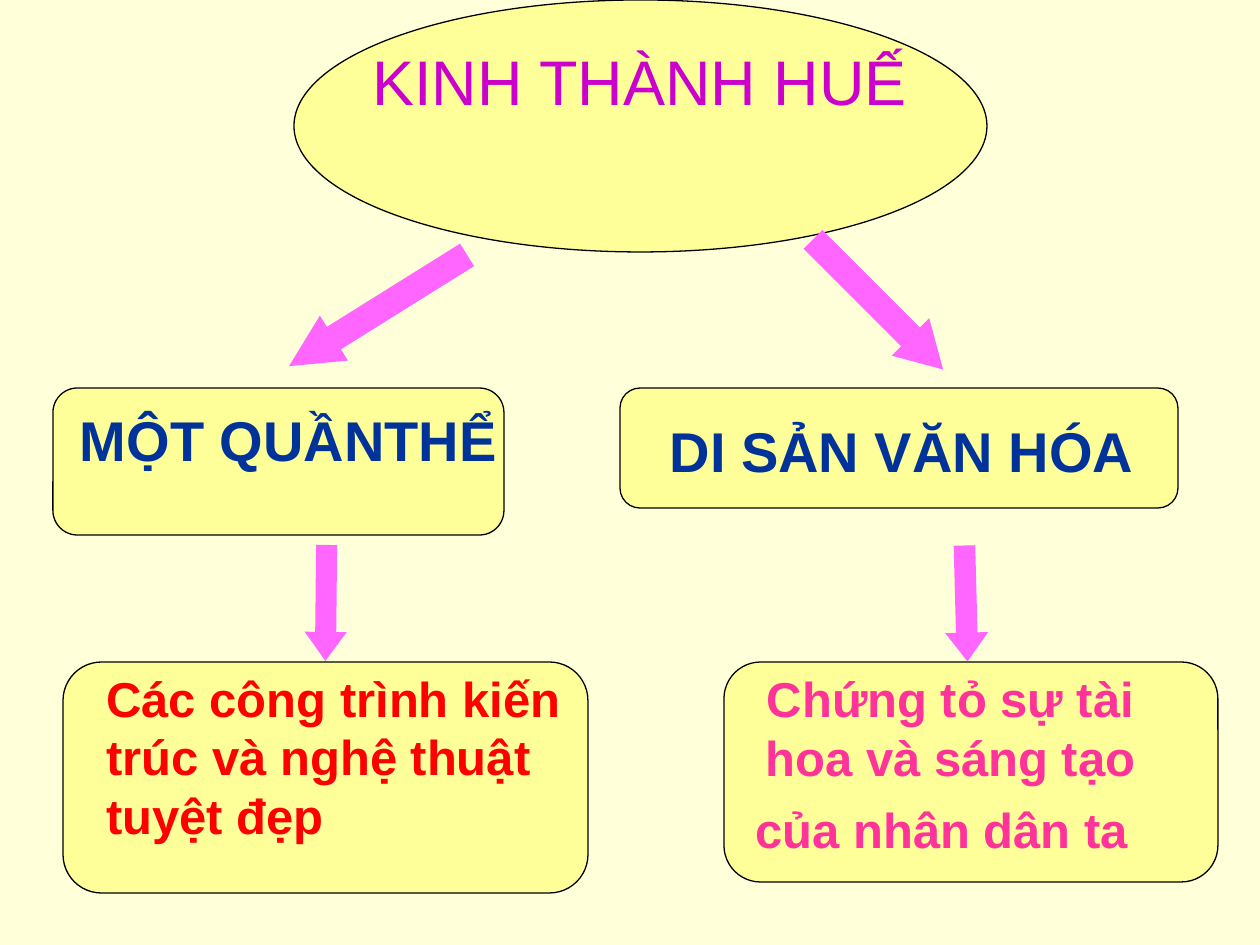
"""Build a concept map slide about the Huế citadel."""
from typing import NamedTuple

from pptx import Presentation
from pptx.dml.color import RGBColor
from pptx.enum.shapes import MSO_SHAPE as Preset
from pptx.enum.text import MSO_ANCHOR as Anchor, MSO_AUTO_SIZE as AutoSize, PP_ALIGN as Align
from pptx.util import Emu, Pt

PX_PER_INCH = 126
PANEL_FILL = "FFFF99"
ARROW_FILL = "FF66FF"
HEADING_BLUE = "003399"


class Box(NamedTuple):
    """A rectangle in px."""
    left: int
    top: int
    width: int
    height: int


class Panel(NamedTuple):
    """An outlined background shape."""
    preset: Preset
    box: Box


class Arrow(NamedTuple):
    """A block arrow turned clockwise from pointing right."""
    box: Box
    angle: float
    head_ratio: float


class Run(NamedTuple):
    """A piece of text with its size in points."""
    text: str
    size: int


class Label(NamedTuple):
    """A text block laid over a panel."""
    box: Box
    runs: list[Run]
    colour: str
    bold: bool = True
    align: Align = Align.CENTER


ROUNDED = Preset.FLOWCHART_ALTERNATE_PROCESS
PANELS = [
    Panel(ROUNDED, Box(724, 662, 494, 220)),
    Panel(ROUNDED, Box(63, 662, 525, 231)),
    Panel(ROUNDED, Box(620, 388, 558, 120)),
    Panel(Preset.OVAL, Box(294, 0, 693, 252)),
    Panel(ROUNDED, Box(53, 388, 451, 147)),
]
TOPIC = Label(Box(324, 29, 651, 97), [Run("KINH THÀNH HUẾ", 36), Run(" ", 40)],
              "CC00CC", bold=False)
LABELS = [
    Label(Box(63, 399, 451, 81), [Run("MỘT QUẦNTHỂ ", 32)], HEADING_BLUE),
    Label(Box(630, 410, 557, 81), [Run("DI SẢN VĂN HÓA ", 32)], HEADING_BLUE),
    Label(Box(735, 662, 431, 208),
          [Run("Chứng tỏ sự tài hoa và sáng tạo của nhân dân ta", 28), Run(" ", 36)],
          "FF3399"),
    Label(Box(94, 662, 494, 190),
          [Run("Các công trình kiến trúc và nghệ thuật tuyệt đẹp", 28)],
          "FF0000", align=Align.LEFT),
]
ARROWS = [
    Arrow(Box(268, 582, 116, 42), 90.6, 0.69),
    Arrow(Box(908, 582, 116, 43), 88.5, 0.67),
    Arrow(Box(273, 284, 210, 53), 148, 1),
    Arrow(Box(786, 278, 184, 53), 45, 0.87),
]


def px(length: int) -> Emu:
    """Turn px into EMU."""
    return Emu(round(length * 914400 / PX_PER_INCH))


def rgb(colour: str) -> RGBColor:
    """Turn a hex string into a colour."""
    return RGBColor.from_string(colour)


def add_filled(slide, preset: Preset, box: Box, colour: str):
    """Add a flat preset shape."""
    shape = slide.shapes.add_shape(preset, *map(px, box))
    shape.shadow.inherit = False
    shape.fill.solid()
    shape.fill.fore_color.rgb = rgb(colour)
    return shape


def draw_panel(slide, panel: Panel) -> None:
    """Draw a panel with a thin black outline."""
    shape = add_filled(slide, panel.preset, panel.box, PANEL_FILL)
    shape.line.color.rgb = rgb("000000")
    shape.line.width = Pt(0.75)


def draw_arrow(slide, arrow: Arrow) -> None:
    """Draw a rotated block arrow without outline."""
    shape = add_filled(slide, Preset.RIGHT_ARROW, arrow.box, ARROW_FILL)
    shape.line.fill.background()
    shape.rotation = arrow.angle
    shape.adjustments[1] = arrow.head_ratio


def write_label(holder, label: Label) -> None:
    """Write a label's runs into a text holder."""
    frame = holder.text_frame
    frame.word_wrap = True
    frame.auto_size = AutoSize.NONE
    frame.vertical_anchor = Anchor.TOP
    paragraph = frame.paragraphs[0]
    paragraph.alignment = label.align
    for part in label.runs:
        run = paragraph.add_run()
        run.text = part.text
        run.font.name = "Arial"
        run.font.size = Pt(part.size)
        run.font.bold = label.bold
        run.font.color.rgb = rgb(label.colour)


def place_title(slide, label: Label) -> None:
    """Move the title placeholder above the panels and fill it."""
    title = slide.shapes.title
    title.left, title.top, title.width, title.height = map(px, label.box)
    slide.shapes.element.append(title.element)
    write_label(title, label)


def main() -> None:
    """Build and save the slide."""
    deck = Presentation()
    deck.slide_width, deck.slide_height = px(1260), px(945)
    slide = deck.slides.add_slide(deck.slide_layouts.get_by_name("Title Only"))
    slide.background.fill.solid()
    slide.background.fill.fore_color.rgb = rgb("FFFFD9")
    for panel in PANELS:
        draw_panel(slide, panel)
    place_title(slide, TOPIC)
    for arrow in ARROWS:
        draw_arrow(slide, arrow)
    for label in LABELS:
        write_label(slide.shapes.add_textbox(*map(px, label.box)), label)
    deck.save("out.pptx")


if __name__ == "__main__":
    main()
